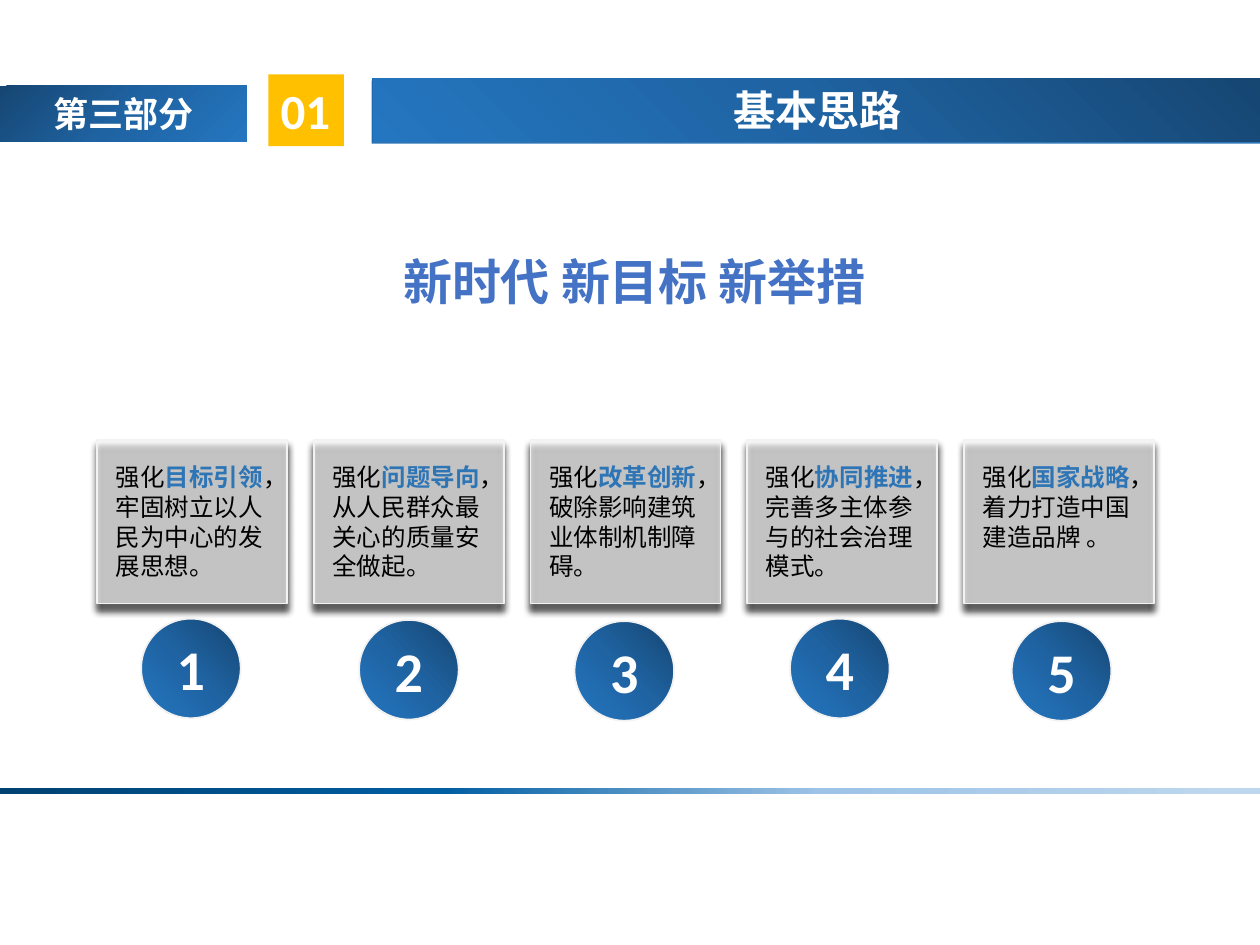
from dataclasses import dataclass
from typing import NamedTuple, Optional

from lxml.etree import SubElement
from pptx import Presentation
from pptx.dml.color import RGBColor
from pptx.enum.shapes import MSO_SHAPE as Preset
from pptx.enum.text import MSO_ANCHOR as Anchor, PP_ALIGN as Align
from pptx.oxml.ns import qn
from pptx.util import Inches, Pt


@dataclass(frozen=True)
class Theme:
    latin: str = "Calibri"
    chinese: str = "Noto Sans CJK SC"
    white: str = "FFFFFF"
    black: str = "000000"
    accent: str = "2E75B6"
    headline: str = "4472C4"
    amber: str = "FFC000"
    edge: str = "F2F2F2"
    deep_blues: tuple = ((0, "164672"), (50, "1F63A2"), (100, "2476C0"))
    rule_blues: tuple = ((0, "004272"), (35, "005EA2"), (65, "9DC3E6"), (98, "BDD7EE"))
    card_opacity: int = 62
    line_height: float = 1.21
    body_size: int = 14
    section_size: int = 20
    title_size: int = 24
    headline_size: int = 28
    number_size: int = 32


THEME = Theme()


class Box(NamedTuple):
    left: float
    top: float
    width: float
    height: float

    def emu(self) -> list:
        return [Inches(length) for length in self]


class Step(NamedTuple):
    focus: str
    detail: str
    circle_left: float
    circle_top: float


STEPS = (
    Step("目标引领", "，牢固树立以人民为中心的发展思想。", 1.12, 4.91),
    Step("问题导向", "，从人民群众最关心的质量安全做起。", 2.85, 4.92),
    Step("改革创新", "，破除影响建筑业体制机制障碍。", 4.56, 4.93),
    Step("协同推进", "，完善多主体参与的社会治理模式。", 6.27, 4.91),
    Step("国家战略", "，着力打造中国建造品牌 。", 8.03, 4.93),
)
CARD_LEFT, CARD_TOP, CARD_PITCH = 0.77, 3.49, 1.72
CIRCLE_SIZE = 0.79


def add_color(parent, color: str, opacity: Optional[int] = None) -> None:
    node = SubElement(parent, qn("a:srgbClr"), val=color)
    if opacity is not None:
        SubElement(node, qn("a:alpha"), val=str(opacity * 1000))


def fill_gradient(shape, stops: tuple, angle: int) -> None:
    """Fill with (percent, colour) stops; the angle runs clockwise."""
    shape.fill.gradient()
    gradient = shape._element.spPr.find(qn("a:gradFill"))
    for child in list(gradient):
        gradient.remove(child)
    stop_list = SubElement(gradient, qn("a:gsLst"))
    for percent, color in stops:
        add_color(SubElement(stop_list, qn("a:gs"), pos=str(percent * 1000)), color)
    SubElement(gradient, qn("a:lin"), ang=str(angle * 60000), scaled="0")


def add_block(slide, box: Box, color: Optional[str] = None, preset=Preset.RECTANGLE,
              edge: Optional[str] = None):
    block = slide.shapes.add_shape(preset, *box.emu())
    block.shadow.inherit = False
    if color:
        block.fill.solid()
        block.fill.fore_color.rgb = RGBColor.from_string(color)
    if edge:
        block.line.color.rgb = RGBColor.from_string(edge)
        block.line.width = Pt(1)
    else:
        block.line.fill.background()
    return block


def add_gradient_block(slide, box: Box, stops: tuple, angle: int, **look):
    block = add_block(slide, box, **look)
    fill_gradient(block, stops, angle)
    return block


def write_text(shape, text, *, size: int, color: str = THEME.white, bold: bool = True,
               font: str = THEME.chinese, align=Align.CENTER, anchor=Anchor.TOP,
               wrap: bool = True, line_height: Optional[float] = THEME.line_height) -> None:
    """Write a string, or (text, colour, bold) pieces, as one paragraph."""
    frame = shape.text_frame
    frame.word_wrap = wrap
    frame.vertical_anchor = anchor
    paragraph = frame.paragraphs[0]
    paragraph.alignment = align
    if line_height:
        paragraph.line_spacing = Pt(size * line_height)
    paragraph._p.get_or_add_pPr().set("hangingPunct", "1")
    pieces = ((text, color, bold),) if isinstance(text, str) else text
    for words, piece_color, piece_bold in pieces:
        run = paragraph.add_run()
        run.text = words
        run.font.size = Pt(size)
        run.font.bold = piece_bold
        run.font.name = font
        run.font.color.rgb = RGBColor.from_string(piece_color)
        SubElement(run._r.get_or_add_rPr(), qn("a:ea"), typeface=THEME.chinese)


def add_label(slide, box: Box, text, **text_format) -> None:
    write_text(slide.shapes.add_textbox(*box.emu()), text, **text_format)


def add_card(slide, index: int, step: Step) -> None:
    """Draw a translucent panel with a drop shadow and its statement."""
    left = CARD_LEFT + index * CARD_PITCH
    panel = add_block(slide, Box(left, CARD_TOP, 1.51, 1.3), THEME.white, edge=THEME.edge)
    properties = panel._element.spPr
    fill_color = properties.find(qn("a:solidFill")).find(qn("a:srgbClr"))
    SubElement(fill_color, qn("a:alpha"), val=str(THEME.card_opacity * 1000))
    shadow = SubElement(properties.find(qn("a:effectLst")), qn("a:outerShdw"),
                        blurRad=str(Pt(4)), dist=str(Pt(4)), dir=str(90 * 60000),
                        algn="t", rotWithShape="0")
    add_color(shadow, THEME.black, THEME.card_opacity)
    statement = (("强化", THEME.black, False),
                 (step.focus, THEME.accent, True),
                 (step.detail, THEME.black, False))
    add_label(slide, Box(left + 0.05, CARD_TOP + 0.13, 1.4, 1.04), statement,
              size=THEME.body_size, align=Align.LEFT)


def add_number(slide, number: int, step: Step) -> None:
    circle = add_gradient_block(
        slide, Box(step.circle_left, step.circle_top, CIRCLE_SIZE, CIRCLE_SIZE),
        THEME.deep_blues, 135, preset=Preset.OVAL, edge=THEME.edge)
    write_text(circle, str(number), size=THEME.number_size, font=THEME.latin,
               anchor=Anchor.MIDDLE, line_height=None)


def add_header(slide) -> None:
    badge = add_block(slide, Box(2.13, 0.59, 0.6, 0.57), THEME.amber)
    write_text(badge, "01", size=THEME.headline_size, font=THEME.latin,
               align=Align.LEFT, wrap=False, line_height=None)
    add_block(slide, Box(2.95, 0.64, 7.05, 0.5), THEME.accent)
    section = add_gradient_block(slide, Box(0, 0.68, 1.96, 0.44), THEME.deep_blues, 45)
    write_text(section, "第三部分", size=THEME.section_size, font=THEME.latin)
    title = add_gradient_block(slide, Box(2.96, 0.62, 7.05, 0.5), THEME.deep_blues, 135)
    write_text(title, "基本思路", size=THEME.title_size)


def main() -> None:
    deck = Presentation()
    deck.slide_width, deck.slide_height = Inches(10), Inches(7.5)
    slide = deck.slides.add_slide(deck.slide_layouts[6])
    add_gradient_block(slide, Box(0, 6.25, 10, 0.05), THEME.rule_blues, 0)
    add_header(slide)
    add_label(slide, Box(1.47, 1.94, 7.13, 0.57), "新时代 新目标 新举措",
              size=THEME.headline_size, color=THEME.headline)
    for index, step in enumerate(STEPS):
        add_card(slide, index, step)
    for number, step in enumerate(STEPS, start=1):
        add_number(slide, number, step)
    deck.save("out.pptx")


if __name__ == "__main__":
    main()
